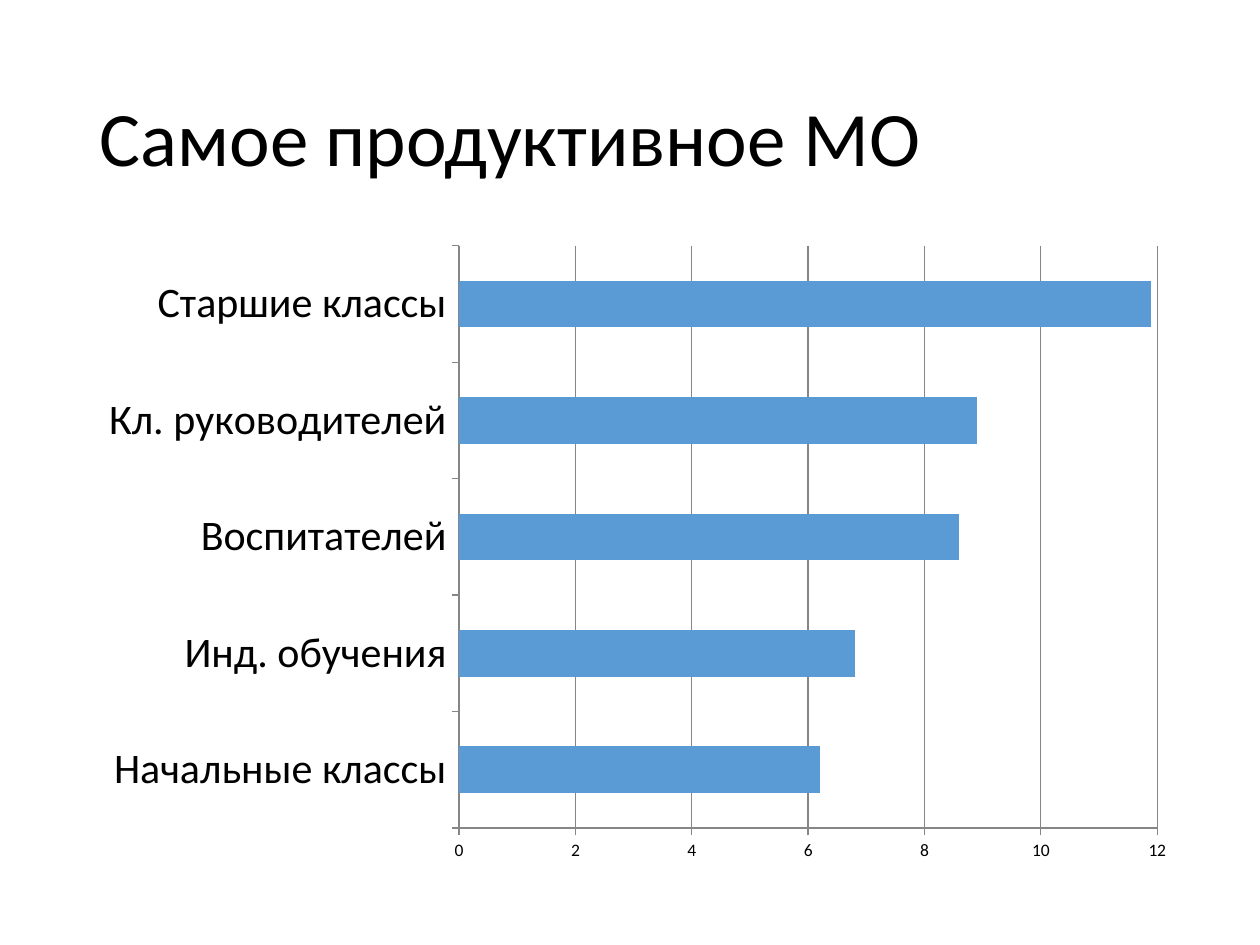
"""Build a slide with a bar chart comparing the productivity of teacher groups."""
from pptx import Presentation
from pptx.chart.data import CategoryChartData
from pptx.dml.color import RGBColor
from pptx.enum.chart import XL_CHART_TYPE as ChartType, XL_TICK_MARK as TickMark
from pptx.enum.text import MSO_ANCHOR as Anchor, PP_ALIGN as Align
from pptx.util import Emu, Pt

HEADING = "Самое продуктивное МО"
SCORES = [
    ("Начальные классы", 6.2),
    ("Инд. обучения", 6.8),
    ("Воспитателей", 8.6),
    ("Кл. руководителей", 8.9),
    ("Старшие классы", 11.9),
]
FONT = "Calibri"
BLACK = RGBColor(0x00, 0x00, 0x00)
BLUE = RGBColor(0x5B, 0x9B, 0xD5)
GREY = RGBColor(0x86, 0x86, 0x86)
PX = 914400 // 126
SLIDE_SIZE = (1260, 945)
TITLE_BOX = (87, 50, 1086, 183)
CHART_BOX = (87, 233, 1101, 640)


def px(lengths):
    return [Emu(length * PX) for length in lengths]


def style_font(font, size):
    font.name = FONT
    font.size = Pt(size)
    font.color.rgb = BLACK
    font.bold = False


def add_heading(slide):
    heading = slide.shapes.title
    heading.left, heading.top, heading.width, heading.height = px(TITLE_BOX)
    heading.text_frame.vertical_anchor = Anchor.MIDDLE
    paragraph = heading.text_frame.paragraphs[0]
    paragraph.alignment = Align.LEFT
    paragraph.line_spacing = 0.9
    run = paragraph.add_run()
    run.text = HEADING
    style_font(run.font, 44)


def add_scores(slide):
    scores = CategoryChartData()
    scores.categories = [group for group, _ in SCORES]
    scores.add_series("Series 1", [score for _, score in SCORES])
    chart = slide.shapes.add_chart(ChartType.BAR_CLUSTERED, *px(CHART_BOX), scores).chart
    chart.has_legend = False
    chart.has_title = False
    style_font(chart.font, 10)

    bars = chart.plots[0]
    bars.gap_width = 150
    bars.vary_by_categories = False
    bars.series[0].format.fill.solid()
    bars.series[0].format.fill.fore_color.rgb = BLUE

    groups, values = chart.category_axis, chart.value_axis
    for axis, size in ((groups, 24), (values, 10)):
        style_font(axis.tick_labels.font, size)
        axis.major_tick_mark = TickMark.OUTSIDE
        axis.minor_tick_mark = TickMark.NONE
        axis.format.line.color.rgb = GREY
        axis.format.line.width = Pt(0.75)
    values.minimum_scale, values.maximum_scale, values.major_unit = 0, 12, 2
    values.tick_labels.number_format = "General"
    values.tick_labels.number_format_is_linked = False
    values.has_major_gridlines = True
    values.major_gridlines.format.line.color.rgb = GREY
    values.major_gridlines.format.line.width = Pt(0.75)


def main():
    deck = Presentation()
    deck.slide_width, deck.slide_height = px(SLIDE_SIZE)
    slide = deck.slides.add_slide(deck.slide_layouts[5])
    add_heading(slide)
    add_scores(slide)
    deck.save("out.pptx")


if __name__ == "__main__":
    main()
